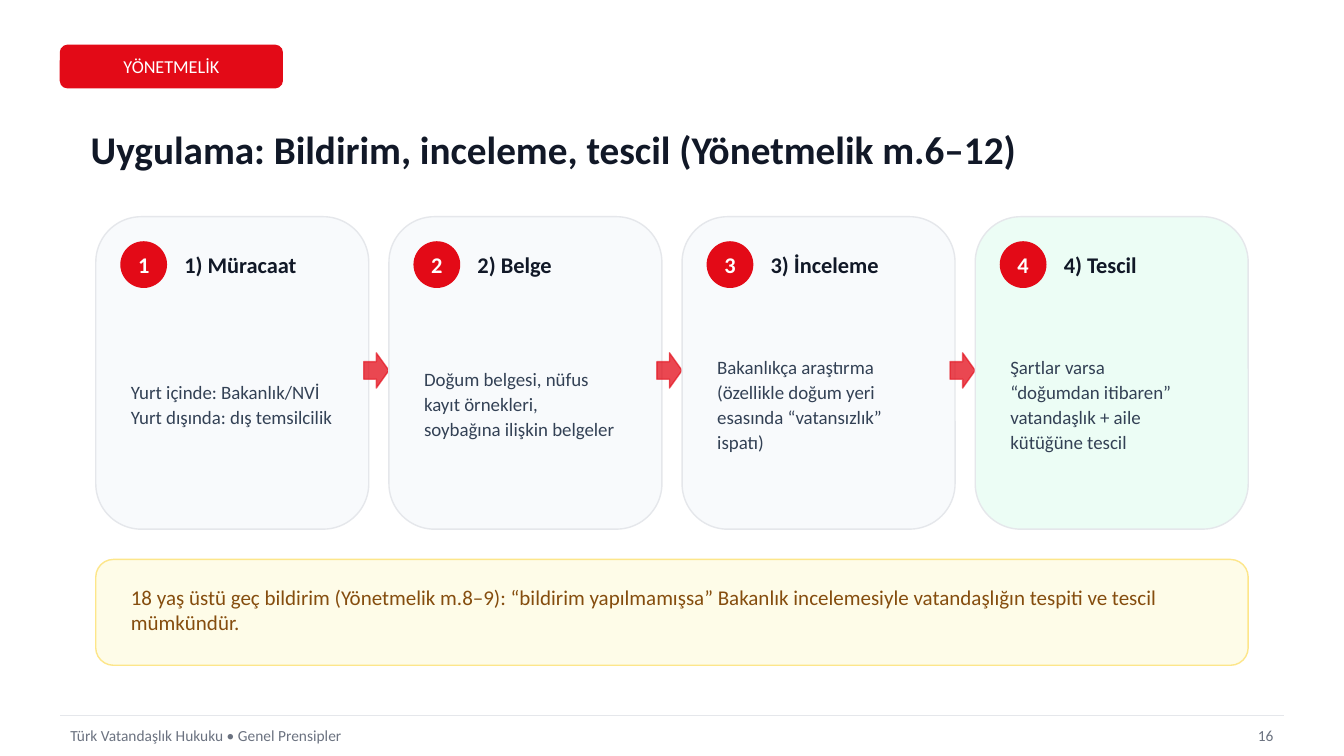
from dataclasses import dataclass

from lxml import etree
from pptx import Presentation
from pptx.dml.color import RGBColor
from pptx.enum import shapes, text
from pptx.oxml import ns
from pptx.util import Pt

SCALE = 9144


@dataclass(frozen=True)
class Theme:
    """Colours, type sizes and font of the slide."""
    font: str = "Calibri"
    red: str = "E30A17"
    white: str = "FFFFFF"
    ink: str = "111827"
    body: str = "334155"
    muted: str = "6B7280"
    rule: str = "E5E7EB"
    card: str = "F8FAFC"
    mint: str = "ECFDF5"
    cream: str = "FEFCE8"
    gold: str = "FDE68A"
    brown: str = "854D0E"
    title_size: float = 28
    heading_size: float = 16
    note_size: float = 15
    body_size: float = 13.5
    tag_size: float = 13
    footer_size: float = 11


THEME = Theme()
SHAPE = shapes.MSO_SHAPE
ALIGN = text.PP_ALIGN

STEPS = [
    ("Müracaat", "Yurt içinde: Bakanlık/NVİ\nYurt dışında: dış temsilcilik", THEME.card),
    ("Belge", "Doğum belgesi, nüfus kayıt örnekleri,\nsoybağına ilişkin belgeler", THEME.card),
    ("İnceleme", "Bakanlıkça araştırma\n(özellikle doğum yeri esasında “vatansızlık” ispatı)", THEME.card),
    ("Tescil", "Şartlar varsa\n“doğumdan itibaren” vatandaşlık + aile kütüğüne tescil", THEME.mint),
]
NOTE = ("18 yaş üstü geç bildirim (Yönetmelik m.8–9): “bildirim yapılmamışsa” Bakanlık "
        "incelemesiyle vatandaşlığın tespiti ve tescil mümkündür.")
CARDS_LEFT, CARDS_TOP, CARDS_WIDTH, CARD_HEIGHT, GAP = 95, 215, 1143, 310, 20
CARD_WIDTH = (CARDS_WIDTH - GAP * (len(STEPS) - 1)) / len(STEPS)


def emu(*lengths):
    """Turn px lengths into EMU."""
    return [round(length * SCALE) for length in lengths]


def write(box, words, size, color, bold=False, align=ALIGN.LEFT, spacing=None):
    """Fill a shape with middle-anchored text in one style."""
    frame = box.text_frame
    frame.text = words
    frame.word_wrap = True
    frame.vertical_anchor = text.MSO_ANCHOR.MIDDLE
    for para in frame.paragraphs:
        para.alignment = align
        if spacing:
            para.line_spacing = spacing
        for span in para.runs:
            span.font.name = THEME.font
            span.font.size = Pt(size)
            span.font.bold = bold
            span.font.color.rgb = RGBColor.from_string(color)


def add_label(page, place, words, size, color, **style):
    """Add a text box."""
    box = page.shapes.add_textbox(*emu(*place))
    write(box, words, size, color, **style)


def add_panel(page, kind, place, fill, line):
    """Add a flat preset shape with a thin outline."""
    panel = page.shapes.add_shape(kind, *emu(*place))
    panel.shadow.inherit = False
    panel.fill.solid()
    panel.fill.fore_color.rgb = RGBColor.from_string(fill)
    panel.line.color.rgb = RGBColor.from_string(line)
    panel.line.width = Pt(1)
    return panel


def add_arrow(page, place):
    """Add a translucent arrow between two steps."""
    arrow = add_panel(page, SHAPE.RIGHT_ARROW, place, THEME.red, THEME.red)
    colors = arrow.element.spPr.iter(ns.qn("a:srgbClr"))
    for color, opacity in zip(list(colors), (75, 60)):
        etree.SubElement(color, ns.qn("a:alpha")).set("val", str(opacity * 1000))


def add_rule(page, left, right, top):
    """Add a thin horizontal line."""
    rule = page.shapes.add_connector(shapes.MSO_CONNECTOR.STRAIGHT, *emu(left, top, right, top))
    rule.line.color.rgb = RGBColor.from_string(THEME.rule)
    rule.line.width = Pt(1)
    etree.SubElement(rule.element.spPr, ns.qn("a:effectLst"))


def add_title(page, place, words):
    """Place and style the title placeholder."""
    title = page.shapes.title
    title.left, title.top, title.width, title.height = emu(*place)
    write(title, words, THEME.title_size, THEME.ink, bold=True)
    title.text_frame.auto_size = text.MSO_AUTO_SIZE.NONE


def add_tag(page, place, words):
    """Add the red section tag."""
    tag = add_panel(page, SHAPE.ROUNDED_RECTANGLE, place, THEME.red, THEME.red)
    write(tag, words, THEME.tag_size, THEME.white, align=ALIGN.CENTER)


def add_step(page, number, heading, words, fill):
    """Add one numbered step card."""
    left = CARDS_LEFT + (number - 1) * (CARD_WIDTH + GAP)
    inner = left + 25
    add_panel(page, SHAPE.ROUNDED_RECTANGLE, (left, CARDS_TOP, CARD_WIDTH, CARD_HEIGHT), fill, THEME.rule)
    badge = add_panel(page, SHAPE.OVAL, (inner, 240, 45, 45), THEME.red, THEME.red)
    badge.text_frame.margin_left = badge.text_frame.margin_right = 0
    write(badge, str(number), THEME.heading_size, THEME.white, bold=True, align=ALIGN.CENTER)
    add_label(page, (inner + 53, 240, CARD_WIDTH - 100, 45), f"{number}) {heading}",
              THEME.heading_size, THEME.ink, bold=True)
    add_label(page, (inner, 300, CARD_WIDTH - 50, 200), words, THEME.body_size, THEME.body, spacing=1.1)
    if number < len(STEPS):
        add_arrow(page, (left + CARD_WIDTH - 5, 350, 25, 35))


def add_note(page):
    """Add the highlighted note below the steps."""
    add_panel(page, SHAPE.ROUNDED_RECTANGLE, (CARDS_LEFT, 555, CARDS_WIDTH, 105), THEME.cream, THEME.gold)
    add_label(page, (CARDS_LEFT + 25, 575, CARDS_WIDTH - 50, 60), NOTE, THEME.note_size, THEME.brown)


def add_footer(page, words, number):
    """Add the footer rule, text and page number."""
    add_rule(page, 60, 1273, 710)
    add_label(page, (60, 715, 1153, 30), words, THEME.footer_size, THEME.muted)
    add_label(page, (1223, 715, 50, 30), number, THEME.footer_size, THEME.muted, align=ALIGN.RIGHT)


def main():
    """Build and save the slide."""
    deck = Presentation()
    deck.slide_width, deck.slide_height = emu(1333, 750)
    page = deck.slides.add_slide(deck.slide_layouts[5])
    add_tag(page, (60, 45, 220, 42), "YÖNETMELİK")
    add_title(page, (80, 110, 1173, 75), "Uygulama: Bildirim, inceleme, tescil (Yönetmelik m.6–12)")
    for number, step in enumerate(STEPS, 1):
        add_step(page, number, *step)
    add_note(page)
    add_footer(page, "Türk Vatandaşlık Hukuku • Genel Prensipler", "16")
    deck.save("out.pptx")


if __name__ == "__main__":
    main()
